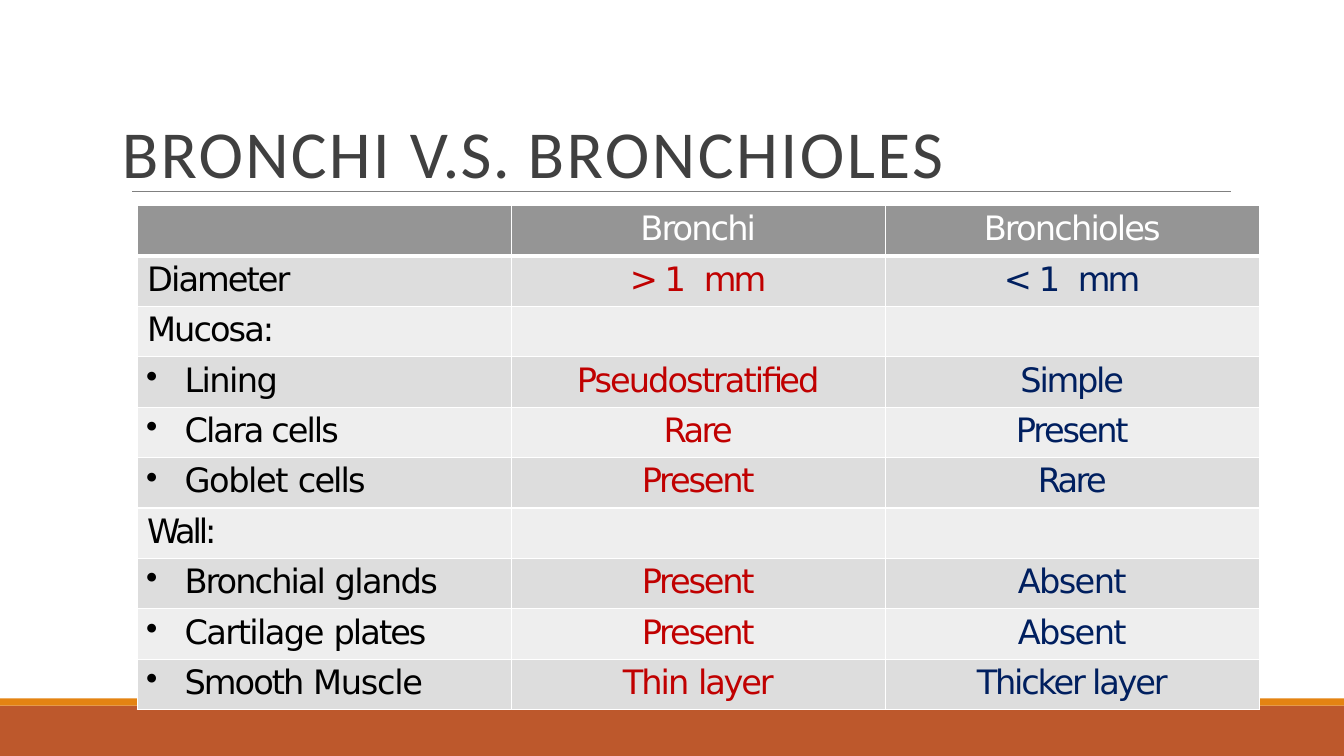
from dataclasses import dataclass
from lxml import etree
from pptx import Presentation
from pptx.dml.color import RGBColor
from pptx.enum.shapes import MSO_CONNECTOR, MSO_SHAPE
from pptx.enum.text import MSO_ANCHOR, PP_ALIGN
from pptx.oxml.ns import qn
from pptx.util import Inches, Pt

STRAIGHT = MSO_CONNECTOR.STRAIGHT
RECTANGLE = MSO_SHAPE.RECTANGLE
BOTTOM = MSO_ANCHOR.BOTTOM
LEFT, CENTER = PP_ALIGN.LEFT, PP_ALIGN.CENTER

TITLE = [("BRONCHI ", 1.6), ("V.S. ", 0.9), ("BRONCHIOLES", 1.8)]
PRESENT = [("Present", -1.6)]
ABSENT = [("Absent", -1.2)]
RARE = [("Rare", -1.9)]
MILLIMETRE = [("1 ", 2.5), ("mm", -2)]
HEADER = ([], [("Bronchi", -1.4)], [("Bronchioles", -1.3)])
GROUPS = [
    (([("Diameter", -1.4)], [("> ", -2.9)] + MILLIMETRE, [("< ", -2.9)] + MILLIMETRE), []),
    (([("Mucosa:", -1.4)], [], []), [
        ([("Lining", -1.1)], [("Pseudostratified", -1.4)], [("Simple", -1.6)]),
        ([("Clara cells", -1.4)], RARE, PRESENT),
        ([("Goblet ", -1), ("cells", -1.4)], PRESENT, RARE),
    ]),
    (([("Wall:", -2.2)], [], []), [
        ([("Bronchial ", -1.4), ("glands", -1.2)], PRESENT, ABSENT),
        ([("Cartilage ", -1.1), ("plates", -1.4)], PRESENT, ABSENT),
        ([("Smooth ", -1.4), ("Muscle", -0.9)],
         [("Thin ", -1.4), ("layer", -1.6)], [("Thicker layer", -1.6)]),
    ]),
]


@dataclass(frozen=True)
class Theme:
    title_font: str = "Calibri"
    table_font: str = "DejaVu Sans"
    title_size: int = 48
    table_size: int = 24
    title: str = "404040"
    rule: str = "808080"
    band: str = "BD582C"
    stripe: str = "E48312"
    header: str = "959595"
    rows: tuple = ("EEEEEE", "DDDDDD")
    columns: tuple = ("000000", "C00000", "001F5F")
    white: str = "FFFFFF"


THEME = Theme()
WIDTH, HEIGHT = 13.33, 7.5
BAND_TOP, STRIPE_TOP = 7, 6.93
TABLE_LEFT, TABLE_TOP = 1.36, 2.04
COLUMN, ROW = 3.71, 0.5


def color(value):
    return RGBColor.from_string(value)


def add_spans(para, spans, font, size, ink):
    for text, spacing in spans:
        span = para.add_run()
        span.text = text
        span.font.name = font
        span.font.size = Pt(size)
        span.font.color.rgb = color(ink)
        span.font._element.set("spc", str(round(spacing * 100)))


def indent(para, margin, first=0.0, bullet=None):
    properties = para._p.get_or_add_pPr()
    properties.set("marL", str(Inches(margin)))
    properties.set("indent", str(Inches(first)))
    if bullet:
        etree.SubElement(properties, qn("a:buChar")).set("char", bullet)


def add_bar(page, top, height, fill):
    bar = page.shapes.add_shape(RECTANGLE, 0, Inches(top), Inches(WIDTH), Inches(height))
    bar.shadow.inherit = False
    bar.fill.solid()
    bar.fill.fore_color.rgb = color(fill)
    bar.line.fill.background()


def add_rule(page):
    rule = page.shapes.add_connector(
        STRAIGHT, Inches(1.31), Inches(1.9), Inches(12.21), Inches(1.9))
    rule.line.color.rgb = color(THEME.rule)
    rule.line.width = Pt(0.5)
    etree.SubElement(rule._element.spPr, qn("a:effectLst"))


def add_title(page):
    box = page.shapes.add_textbox(Inches(1.2), Inches(0.31), Inches(11), Inches(1.59))
    frame = box.text_frame
    frame.word_wrap = True
    frame.vertical_anchor = BOTTOM
    frame.margin_left = frame.margin_right = frame.margin_bottom = 0
    frame.margin_top = Inches(0.01)
    para = frame.paragraphs[0]
    para.space_before = Pt(1)
    indent(para, 0.01)
    add_spans(para, TITLE, THEME.title_font, THEME.title_size, THEME.title)


def add_borders(cell, top, bottom):
    properties = cell._tc.get_or_add_tcPr()
    for side, width in (("L", 1), ("R", 1), ("T", top), ("B", bottom)):
        edge = etree.SubElement(properties, qn("a:ln" + side), w=str(Pt(width)))
        fill = etree.SubElement(edge, qn("a:solidFill"))
        etree.SubElement(fill, qn("a:srgbClr"), val=THEME.white)


def fill_cell(cell, spans, row, column, bulleted):
    add_borders(cell, 3 if row == 1 else 1, 3 if row == 0 else 1)
    cell.fill.solid()
    cell.fill.fore_color.rgb = color(THEME.rows[row % 2] if row else THEME.header)
    cell.margin_left = cell.margin_right = cell.margin_bottom = 0
    cell.margin_top = Inches(0.04)
    para = cell.text_frame.paragraphs[0]
    para.space_before = Pt(3)
    para.alignment = CENTER if column else LEFT
    if spans and column == 0:
        if bulleted:
            indent(para, 0.47, -0.38, "•")
        else:
            indent(para, 0.1)
    ink = THEME.columns[column] if row else THEME.white
    add_spans(para, spans, THEME.table_font, THEME.table_size, ink)


def add_comparison(page):
    lines = [(HEADER, False)]
    for heading, items in GROUPS:
        lines.append((heading, False))
        lines.extend((item, True) for item in items)
    columns = len(HEADER)
    table = page.shapes.add_table(
        len(lines), columns, Inches(TABLE_LEFT), Inches(TABLE_TOP),
        Inches(COLUMN * columns), Inches(ROW * len(lines))).table
    table.first_row = table.horz_banding = False
    for row, (cells, bulleted) in enumerate(lines):
        for column, spans in enumerate(cells):
            fill_cell(table.cell(row, column), spans, row, column, bulleted)


def main():
    deck = Presentation()
    deck.slide_width, deck.slide_height = Inches(WIDTH), Inches(HEIGHT)
    page = deck.slides.add_slide(deck.slide_layouts[6])
    add_bar(page, BAND_TOP, HEIGHT - BAND_TOP, THEME.band)
    add_bar(page, STRIPE_TOP, BAND_TOP - STRIPE_TOP, THEME.stripe)
    add_rule(page)
    add_title(page)
    add_comparison(page)
    deck.save("out.pptx")


if __name__ == "__main__":
    main()
